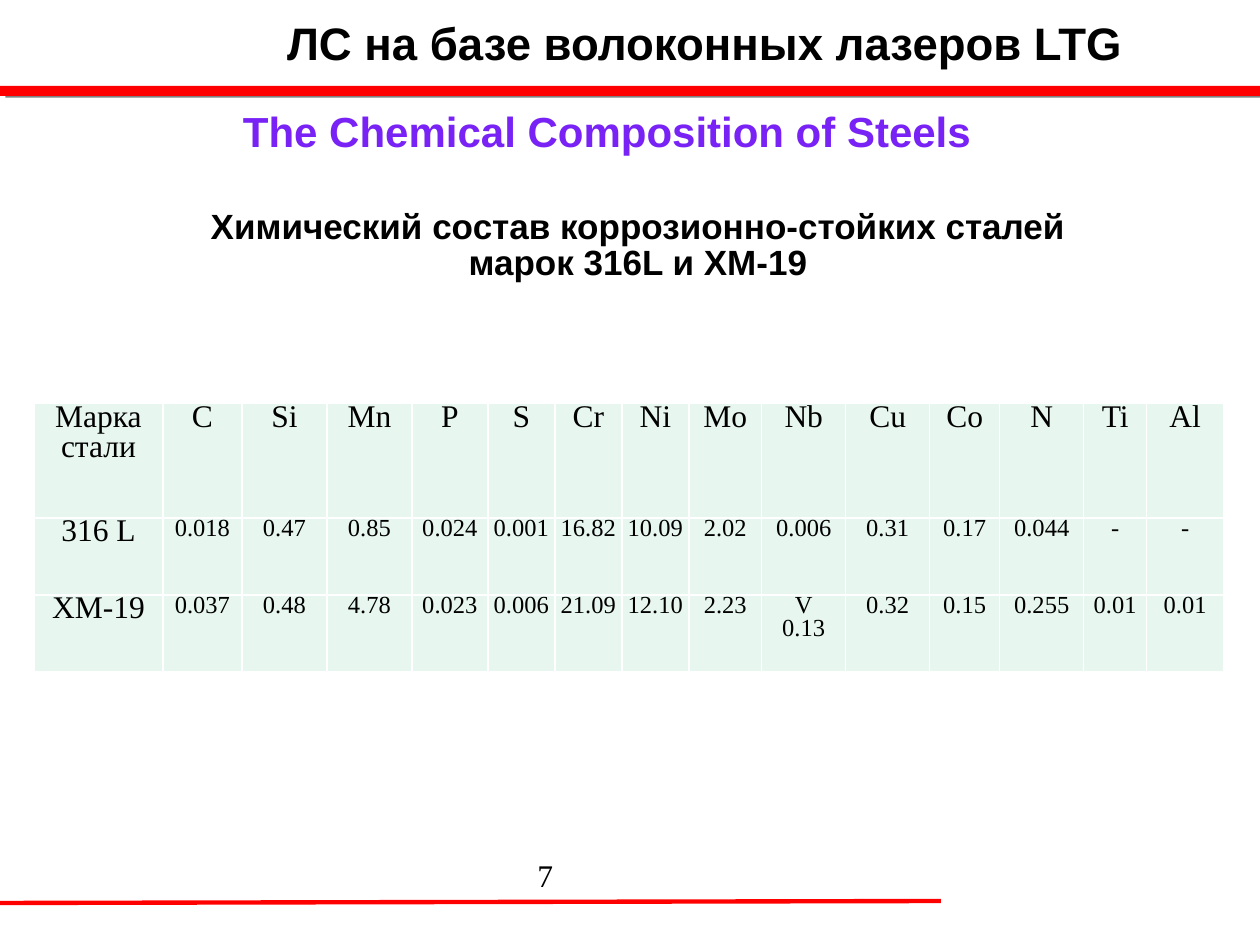
import pptx
import pptx.dml.color
import pptx.enum.shapes
import pptx.enum.text
import pptx.oxml
import pptx.oxml.ns
import pptx.util
import lxml.etree

PX = 914400 / 126
COLORS = {"red": "FF0000", "violet": "7822F6", "black": "000000",
          "mint": "E7F6EF", "white": "FFFFFF", "gray": "808080"}
CENTER = pptx.enum.text.PP_ALIGN.CENTER
TOP = pptx.enum.text.MSO_ANCHOR.TOP
MIDDLE = pptx.enum.text.MSO_ANCHOR.MIDDLE
GROW = pptx.enum.text.MSO_AUTO_SIZE.SHAPE_TO_FIT_TEXT
SANS, SERIF = "Arial", "Times New Roman"


def px(value):
    return pptx.util.Emu(round(value * PX))


def color(name):
    return pptx.dml.color.RGBColor.from_string(COLORS[name])


def add_xml(parent, tag, **attributes):
    element = lxml.etree.SubElement(parent, pptx.oxml.ns.qn(tag))
    for key, value in attributes.items():
        element.set(key, str(value))
    return element


class SlideBuilder:
    def __init__(self, slide):
        self.slide = slide

    def fill_text(self, frame, text, size, font=SANS, ink="black", bold=False,
                  align=CENTER, spacing=0.86, indent=0):
        frame.text = text
        for paragraph in frame.paragraphs:
            if indent:
                properties = paragraph._p.get_or_add_pPr()
                properties.set("marL", "0")
                properties.set("indent", str(px(indent)))
            paragraph.alignment = align
            paragraph.line_spacing = spacing
            paragraph.space_before = pptx.util.Pt(0)
            paragraph.font.size = pptx.util.Pt(size)
            paragraph.font.name = font
            paragraph.font.bold = bold
            paragraph.font.color.rgb = color(ink)

    def title(self, left, top, width, height, text, size):
        title = self.slide.shapes.title
        title.left, title.top = px(left), px(top)
        title.width, title.height = px(width), px(height)
        title.text_frame.word_wrap = True
        title.text_frame.auto_size = GROW
        title.text_frame.vertical_anchor = TOP
        self.fill_text(title.text_frame, text, size, bold=True, spacing=0.93)

    def text(self, left, top, width, height, text, size, wrap=False,
             anchor=TOP, **style):
        box = self.slide.shapes.add_textbox(px(left), px(top), px(width), px(height))
        box.text_frame.word_wrap = wrap
        box.text_frame.vertical_anchor = anchor
        if not wrap:
            box.text_frame.auto_size = GROW
        self.fill_text(box.text_frame, text, size, **style)

    def bar(self, left, top, width, height, fill):
        bar = self.slide.shapes.add_shape(
            pptx.enum.shapes.MSO_SHAPE.RECTANGLE,
            px(left), px(top), px(width), px(height))
        bar.shadow.inherit = False
        bar.fill.solid()
        bar.fill.fore_color.rgb = color(fill)
        bar.line.fill.background()
        effects = bar._element.spPr.find(pptx.oxml.ns.qn("a:effectLst"))
        shadow = add_xml(effects, "a:outerShdw", dist=40640, dir=1080000)
        add_xml(shadow, "a:srgbClr", val=COLORS["gray"])

    def line(self, x1, y1, x2, y2, ink, width):
        line = self.slide.shapes.add_connector(
            pptx.enum.shapes.MSO_CONNECTOR.STRAIGHT, px(x1), px(y1), px(x2), px(y2))
        line.line.color.rgb = color(ink)
        line.line.width = pptx.util.Pt(width)
        add_xml(line._element.spPr, "a:effectLst")

    def cell(self, cell, text, size):
        cell.margin_left = cell.margin_right = 0
        cell.margin_top = cell.margin_bottom = 0
        properties = cell._tc.get_or_add_tcPr()
        for side in ("a:lnL", "a:lnR", "a:lnT", "a:lnB"):
            border = add_xml(properties, side, w=pptx.util.Pt(1))
            add_xml(add_xml(border, "a:solidFill"), "a:srgbClr", val=COLORS["white"])
        cell.fill.solid()
        cell.fill.fore_color.rgb = color("mint")
        self.fill_text(cell.text_frame, text, size, font=SERIF)

    def table(self, left, top, widths, heights, rows, head_size, value_size):
        table = self.slide.shapes.add_table(
            len(rows), len(widths), px(left), px(top),
            px(sum(widths)), px(sum(heights))).table
        table.first_row = table.horz_banding = False
        for column, width in zip(table.columns, widths):
            column.width = px(width)
        for row, height in zip(table.rows, heights):
            row.height = px(height)
        for r, values in enumerate(rows):
            for c, value in enumerate(values):
                size = head_size if r == 0 or c == 0 else value_size
                self.cell(table.cell(r, c), value, size)


def main():
    deck = pptx.Presentation()
    deck.slide_width, deck.slide_height = px(1260), px(945)
    builder = SlideBuilder(deck.slides.add_slide(deck.slide_layouts[5]))

    # Frame lines
    builder.line(941, 901, -1, 903, "red", 2.5)
    builder.bar(0, 86, 1260, 10, "red")

    # Headings
    builder.title(179, 14, 1052, 64, "ЛС на базе волоконных лазеров LTG", 26)
    builder.text(227, 107, 760, 64, "The Chemical Composition of Steels", 24,
                 ink="violet", bold=True)
    builder.text(127, 198, 959, 97,
                 "Химический состав коррозионно-стойких сталей\nмарок 316L и ХМ-19",
                 20, anchor=MIDDLE, bold=True, indent=63)

    # Steel composition
    composition = [
        ["Марка стали", *"C Si Mn P S Cr Ni Mo Nb Cu Co N Ti Al".split()],
        ["316 L", "0.018", "0.47", "0.85", "0.024", "0.001", "16.82", "10.09",
         "2.02", "0.006", "0.31", "0.17", "0.044", "-", "-"],
        ["ХМ-19", "0.037", "0.48", "4.78", "0.023", "0.006", "21.09", "12.10",
         "2.23", "V\n0.13", "0.32", "0.15", "0.255", "0.01", "0.01"],
    ]
    widths = [129, 79, 85, 85, 76, 67, 67, 67, 73, 84, 84, 70, 84, 63, 77]
    builder.table(34, 403, widths, [115, 77, 77], composition, 18, 14)

    # Page number
    builder.text(525, 850, 252, 50, "7", 18, wrap=True, font=SERIF,
                 align=pptx.enum.text.PP_ALIGN.LEFT, spacing=1.0)

    deck.save("out.pptx")


if __name__ == "__main__":
    main()
